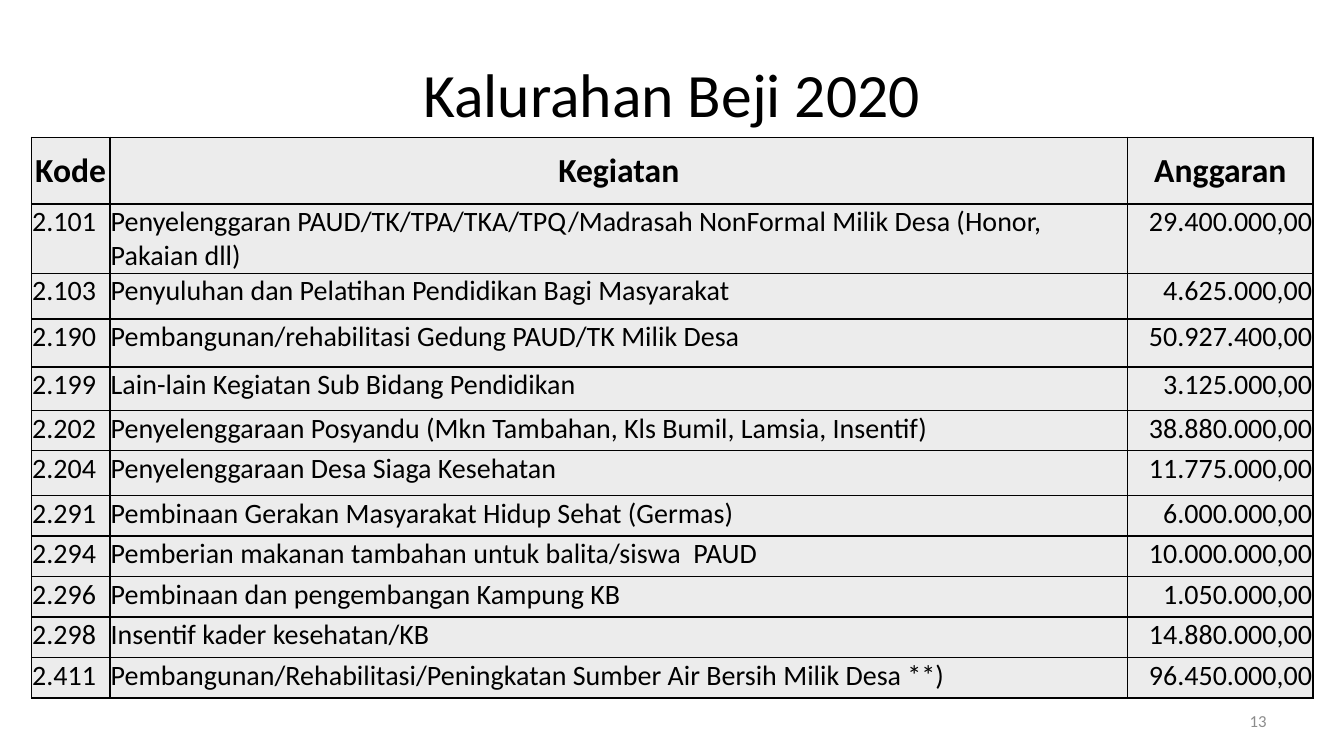
from pptx import Presentation
from pptx.dml.color import RGBColor
from pptx.enum.text import MSO_ANCHOR, PP_ALIGN
from pptx.oxml import parse_xml
from pptx.oxml.ns import nsdecls
from pptx.util import Cm, Pt

# Content
TITLE = "Kalurahan Beji 2020"
PAGE_NUMBER = "13"
HEADER = ("Kode", "Kegiatan", "Anggaran")
BUDGET = [
    ("2.101", "Penyelenggaran PAUD/TK/TPA/TKA/TPQ/Madrasah NonFormal Milik Desa (Honor, Pakaian dll)", "29.400.000,00"),
    ("2.103", "Penyuluhan dan Pelatihan Pendidikan Bagi Masyarakat", "4.625.000,00"),
    ("2.190", "Pembangunan/rehabilitasi Gedung PAUD/TK Milik Desa", "50.927.400,00"),
    ("2.199", "Lain-lain Kegiatan Sub Bidang Pendidikan", "3.125.000,00"),
    ("2.202", "Penyelenggaraan Posyandu (Mkn Tambahan, Kls Bumil, Lamsia, Insentif)", "38.880.000,00"),
    ("2.204", "Penyelenggaraan Desa Siaga Kesehatan", "11.775.000,00"),
    ("2.291", "Pembinaan Gerakan Masyarakat Hidup Sehat (Germas)", "6.000.000,00"),
    ("2.294", "Pemberian makanan tambahan untuk balita/siswa  PAUD", "10.000.000,00"),
    ("2.296", "Pembinaan dan pengembangan Kampung KB", "1.050.000,00"),
    ("2.298", "Insentif kader kesehatan/KB", "14.880.000,00"),
    ("2.411", "Pembangunan/Rehabilitasi/Peningkatan Sumber Air Bersih Milik Desa **)", "96.450.000,00"),
]

# Style and measures in centimetres
COLORS = {"text": "000000", "cell": "ECECEC", "border": "000000", "number": "8C8C8C"}
FONT = "Calibri"
COLUMN_WIDTHS = (1.98, 25.65, 4.67)
ROW_HEIGHTS = [1.68, 1.75, 1.15, 1.21, 1.1, 1.01, 1.13] + [1.02] * 5
COLUMN_ALIGNMENTS = (PP_ALIGN.LEFT, PP_ALIGN.LEFT, PP_ALIGN.RIGHT)
CELL_MARGIN = Cm(0.02)


def write(text_frame, text, size, alignment, color="text", bold=False):
    text_frame.text = text
    paragraph = text_frame.paragraphs[0]
    paragraph.alignment = alignment
    font = paragraph.runs[0].font
    font.name, font.size, font.bold = FONT, Pt(size), bold
    font.color.rgb = RGBColor.from_string(COLORS[color])


def add_borders(cell):
    properties = cell._tc.get_or_add_tcPr()
    for position, side in enumerate(("lnL", "lnR", "lnT", "lnB")):
        properties.insert(position, parse_xml(
            f'<a:{side} {nsdecls("a")} w="{Pt(1)}"><a:solidFill>'
            f'<a:srgbClr val="{COLORS["border"]}"/></a:solidFill></a:{side}>'))


def add_budget_table(slide):
    rows = [HEADER] + BUDGET
    table = slide.shapes.add_table(
        len(rows), len(HEADER), Cm(0.79), Cm(3.46),
        Cm(sum(COLUMN_WIDTHS)), Cm(sum(ROW_HEIGHTS))).table
    for column, width in zip(table.columns, COLUMN_WIDTHS):
        column.width = Cm(width)
    for row, height in zip(table.rows, ROW_HEIGHTS):
        row.height = Cm(height)
    for row_index, values in enumerate(rows):
        is_header = row_index == 0
        for column_index, value in enumerate(values):
            cell = table.cell(row_index, column_index)
            cell.margin_left = cell.margin_right = cell.margin_top = CELL_MARGIN
            cell.margin_bottom = 0
            cell.vertical_anchor = MSO_ANCHOR.MIDDLE if is_header else MSO_ANCHOR.TOP
            cell.fill.solid()
            cell.fill.fore_color.rgb = RGBColor.from_string(COLORS["cell"])
            alignment = PP_ALIGN.CENTER if is_header else COLUMN_ALIGNMENTS[column_index]
            write(cell.text_frame, value, 24 if is_header else 20, alignment, bold=is_header)
            add_borders(cell)


def main():
    presentation = Presentation()
    presentation.slide_width, presentation.slide_height = Cm(33.87), Cm(19.05)
    slide = presentation.slides.add_slide(presentation.slide_layouts[5])

    # Title
    title = slide.shapes.title
    title.left, title.top, title.width, title.height = Cm(1.69), Cm(0.76), Cm(30.48), Cm(3.18)
    title.text_frame.vertical_anchor = MSO_ANCHOR.MIDDLE
    write(title.text_frame, TITLE, 44, PP_ALIGN.CENTER)

    # Page number
    number = slide.shapes.add_textbox(Cm(24.27), Cm(17.66), Cm(7.9), Cm(1.01))
    number.text_frame.word_wrap = True
    number.text_frame.vertical_anchor = MSO_ANCHOR.MIDDLE
    write(number.text_frame, PAGE_NUMBER, 12, PP_ALIGN.RIGHT, "number")

    # Budget table
    add_budget_table(slide)
    presentation.save("out.pptx")


if __name__ == "__main__":
    main()
